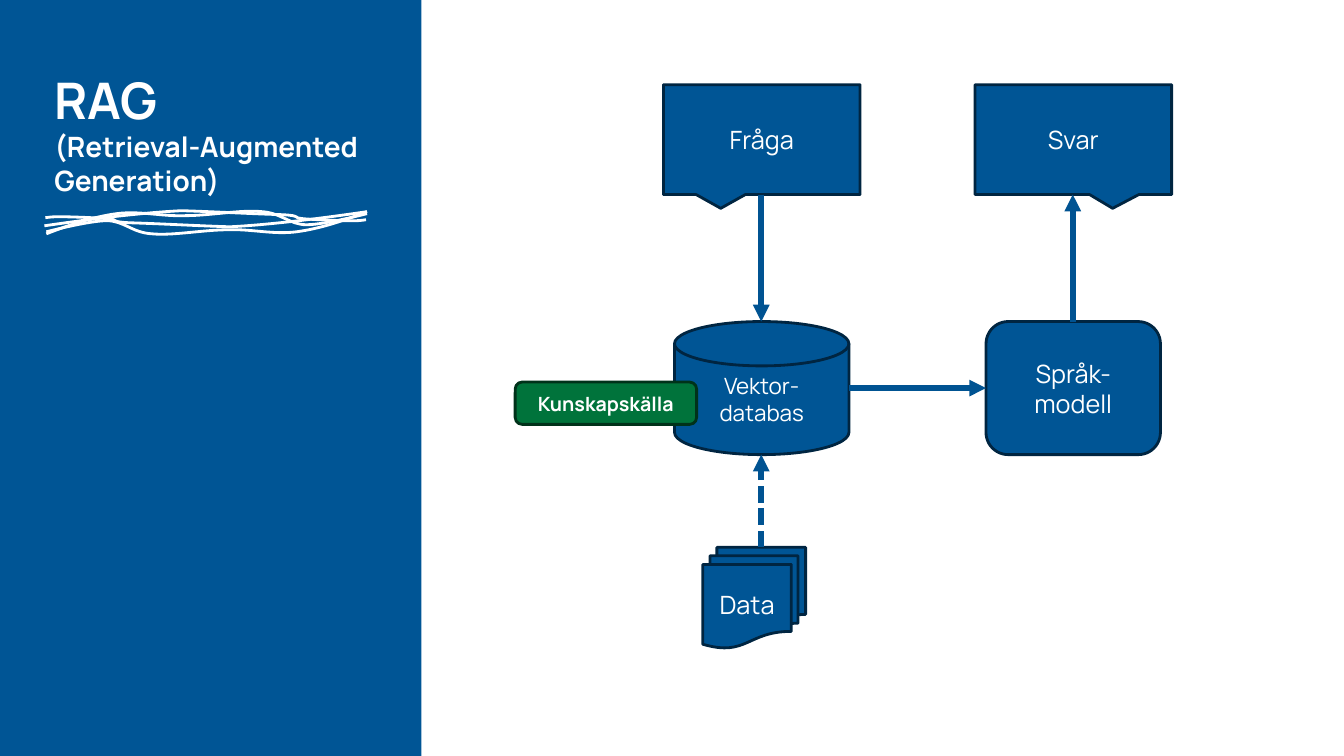
from dataclasses import dataclass

from lxml import etree
from pptx import Presentation
from pptx.dml.color import RGBColor
from pptx.enum.dml import MSO_LINE
from pptx.enum.shapes import MSO_CONNECTOR, MSO_SHAPE
from pptx.enum.text import MSO_ANCHOR, PP_ALIGN
from pptx.oxml.ns import qn
from pptx.util import Inches, Pt

FONT = "Manrope"
BLUE, NAVY, ARROW_BLUE = "005595", "002541", "005392"
GREEN, DARK_GREEN, WHITE = "00733B", "00321A", "FFFFFF"

Point = tuple[float, float]


@dataclass
class Node:
    text: str
    preset: MSO_SHAPE
    box: tuple[float, float, float, float]
    size: int = 18
    bold: bool = False
    fill: str = BLUE
    outline: str = NAVY
    adjustments: tuple[float, ...] = ()


@dataclass
class Arrow:
    start: Point
    end: Point
    dashed: bool = False


NODES = [
    Node("Vektor-databas", MSO_SHAPE.FLOWCHART_MAGNETIC_DISK, (6.69, 3.19, 1.73, 1.32), 16),
    Node("Data", MSO_SHAPE.FLOWCHART_MULTIDOCUMENT, (6.97, 5.43, 1.02, 1)),
    Node("Fråga", MSO_SHAPE.RECTANGULAR_CALLOUT, (6.58, 0.84, 1.95, 1.09)),
    Node("Språk-modell", MSO_SHAPE.ROUNDED_RECTANGLE, (9.78, 3.19, 1.73, 1.32)),
    Node("Svar", MSO_SHAPE.RECTANGULAR_CALLOUT, (9.67, 0.84, 1.95, 1.09),
         adjustments=(0.2, 0.625)),
]
BADGE = Node("Kunskapskälla", MSO_SHAPE.ROUNDED_RECTANGLE, (5.11, 3.79, 1.8, 0.42),
             14, True, GREEN, DARK_GREEN)
ARROWS = [
    Arrow((7.55, 1.93), (7.55, 3.19)),
    Arrow((8.42, 3.85), (9.78, 3.85)),
    Arrow((10.64, 3.19), (10.64, 1.93)),
    Arrow((7.55, 5.43), (7.55, 4.51), dashed=True),
]

# Each strand is a chain of cubic curves: a start, then three points per curve
UPPER_STRAND = [
    (0.44, 2.24), (0.92, 2.17), (1.41, 2.11), (1.8, 2.09),
    (2.13, 2.1), (2.47, 2.12), (2.8, 2.13),
    (3, 2.14), (2.89, 2.16), (3.01, 2.17),
    (3.12, 2.18), (3.39, 2.19), (3.49, 2.19),
    (3.6, 2.19), (3.61, 2.18), (3.63, 2.18),
]
LOWER_STRAND = [
    (0.46, 2.32), (0.69, 2.23), (0.93, 2.15), (1.16, 2.12),
    (1.39, 2.09), (1.61, 2.15), (1.84, 2.14),
    (2.08, 2.14), (2.39, 2.08), (2.59, 2.1),
    (2.79, 2.11), (2.87, 2.23), (3.04, 2.23),
    (3.22, 2.23), (3.64, 2.12), (3.64, 2.12),
]


def rgb(color: str) -> RGBColor:
    return RGBColor.from_string(color)


def set_attributes(target, values: dict) -> None:
    for name, value in values.items():
        setattr(target, name, value)


def style_font(font, size: int, bold: bool) -> None:
    set_attributes(font, {"name": FONT, "size": Pt(size), "bold": bold})
    font.color.rgb = rgb(WHITE)


def add_panel(slide, box: tuple[float, ...], color: str) -> None:
    shape = slide.shapes.add_shape(MSO_SHAPE.RECTANGLE, *map(Inches, box))
    shape.shadow.inherit = False
    shape.fill.solid()
    shape.fill.fore_color.rgb = rgb(color)
    shape.line.fill.background()


def add_node(slide, node: Node) -> None:
    shape = slide.shapes.add_shape(node.preset, *map(Inches, node.box))
    shape.shadow.inherit = False
    for index, value in enumerate(node.adjustments):
        shape.adjustments[index] = value
    shape.fill.solid()
    shape.fill.fore_color.rgb = rgb(node.fill)
    shape.line.color.rgb = rgb(node.outline)
    shape.line.width = Pt(2)
    set_attributes(shape.text_frame, {"word_wrap": True, "vertical_anchor": MSO_ANCHOR.MIDDLE})
    paragraph = shape.text_frame.paragraphs[0]
    paragraph.alignment = PP_ALIGN.CENTER
    run = paragraph.add_run()
    run.text = node.text
    style_font(run.font, node.size, node.bold)


def add_arrow(slide, arrow: Arrow) -> None:
    ends = map(Inches, arrow.start + arrow.end)
    connector = slide.shapes.add_connector(MSO_CONNECTOR.STRAIGHT, *ends)
    connector.line.color.rgb = rgb(ARROW_BLUE)
    connector.line.width = Pt(4)
    if arrow.dashed:
        connector.line.dash_style = MSO_LINE.SQUARE_DOT
    line = connector.line._get_or_add_ln()
    etree.SubElement(line, qn("a:tailEnd"), type="triangle")
    etree.SubElement(connector._element.spPr, qn("a:effectLst"))


def half_turn(controls: list[Point], center: Point) -> list[Point]:
    return [(2 * center[0] - x, 2 * center[1] - y) for x, y in controls]


def add_strand(slide, controls: list[Point]) -> None:
    start, *others = [(Inches(x), Inches(y)) for x, y in controls]
    builder = slide.shapes.build_freeform(*start)
    builder.add_line_segments(others, close=False)
    shape = builder.convert_to_shape()
    shape.shadow.inherit = False
    shape.fill.background()
    shape.line.color.rgb = rgb(WHITE)
    shape.line.width = Pt(2)

    # Join every three line segments into one cubic curve
    outline = shape._element.find(".//" + qn("a:path"))
    segments = outline.findall(qn("a:lnTo"))
    for first in range(0, len(segments), 3):
        curve = etree.SubElement(outline, qn("a:cubicBezTo"))
        for segment in segments[first:first + 3]:
            curve.append(segment[0])
            outline.remove(segment)


def add_title(slide) -> None:
    text_box = slide.shapes.add_textbox(*map(Inches, (0.44, 0.64, 3.29, 2.29)))
    text_box.text_frame.word_wrap = True
    paragraph = text_box.text_frame.paragraphs[0]
    heading = paragraph.add_run()
    heading.text = "RAG"
    style_font(heading.font, 36, True)
    paragraph.add_line_break()
    subtitle = paragraph.add_run()
    subtitle.text = "(Retrieval-Augmented Generation)"
    style_font(subtitle.font, 20, True)


def main() -> None:
    presentation = Presentation()
    set_attributes(presentation, {"slide_width": Inches(13.33), "slide_height": Inches(7.5)})
    slide = presentation.slides.add_slide(presentation.slide_layouts[6])

    # Blue background and white diagram area
    add_panel(slide, (0, 0, 13.33, 7.5), BLUE)
    add_panel(slide, (4.18, 0, 9.15, 7.5), WHITE)

    # Diagram
    for node in NODES:
        add_node(slide, node)
    for arrow in ARROWS:
        add_arrow(slide, arrow)

    # Title with its woven underline
    add_title(slide)
    for strand in (UPPER_STRAND, LOWER_STRAND,
                   half_turn(UPPER_STRAND, (2.04, 2.17)),
                   half_turn(LOWER_STRAND, (2.05, 2.21))):
        add_strand(slide, strand)

    # Badge on top of the database
    add_node(slide, BADGE)
    presentation.save("out.pptx")


if __name__ == "__main__":
    main()
